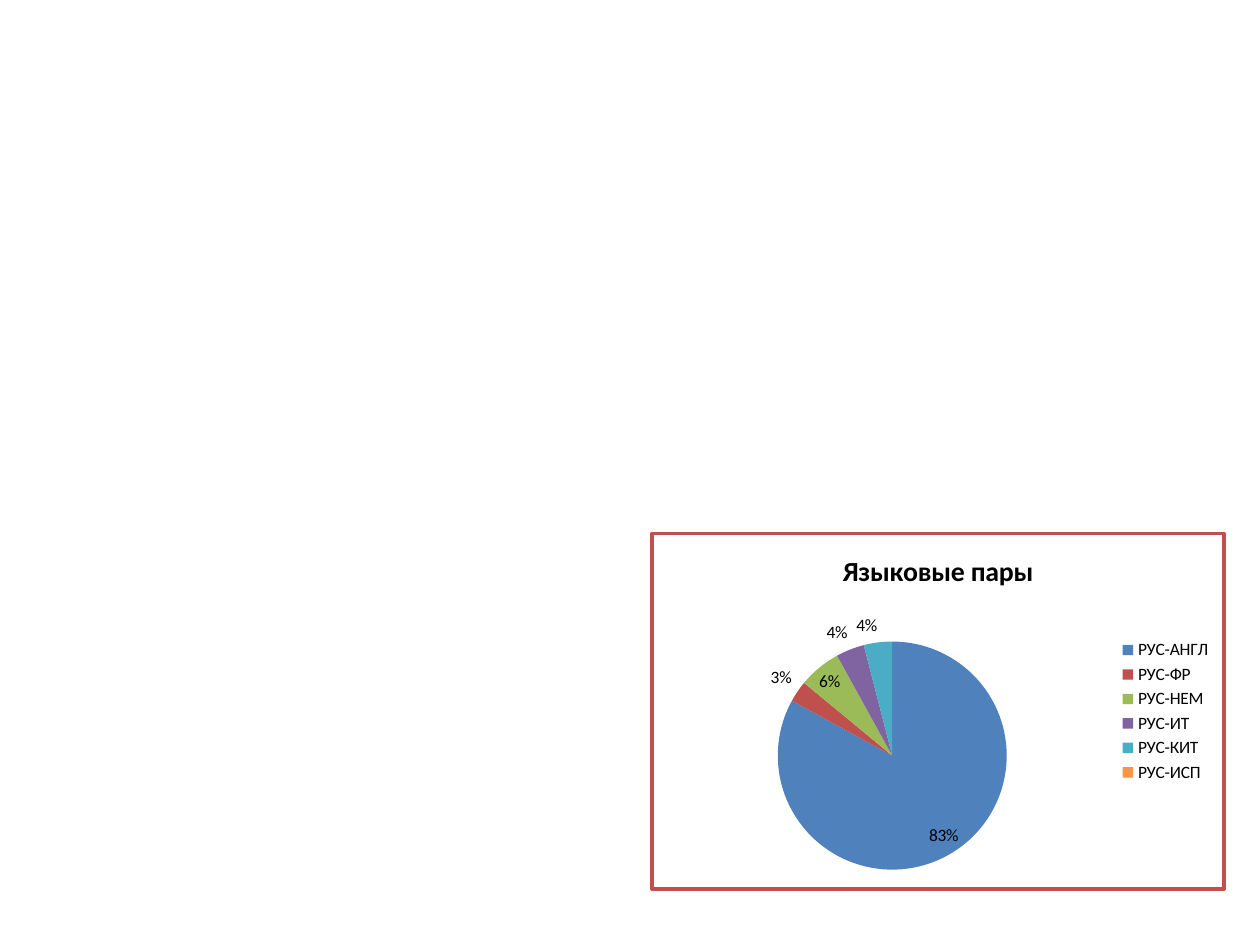
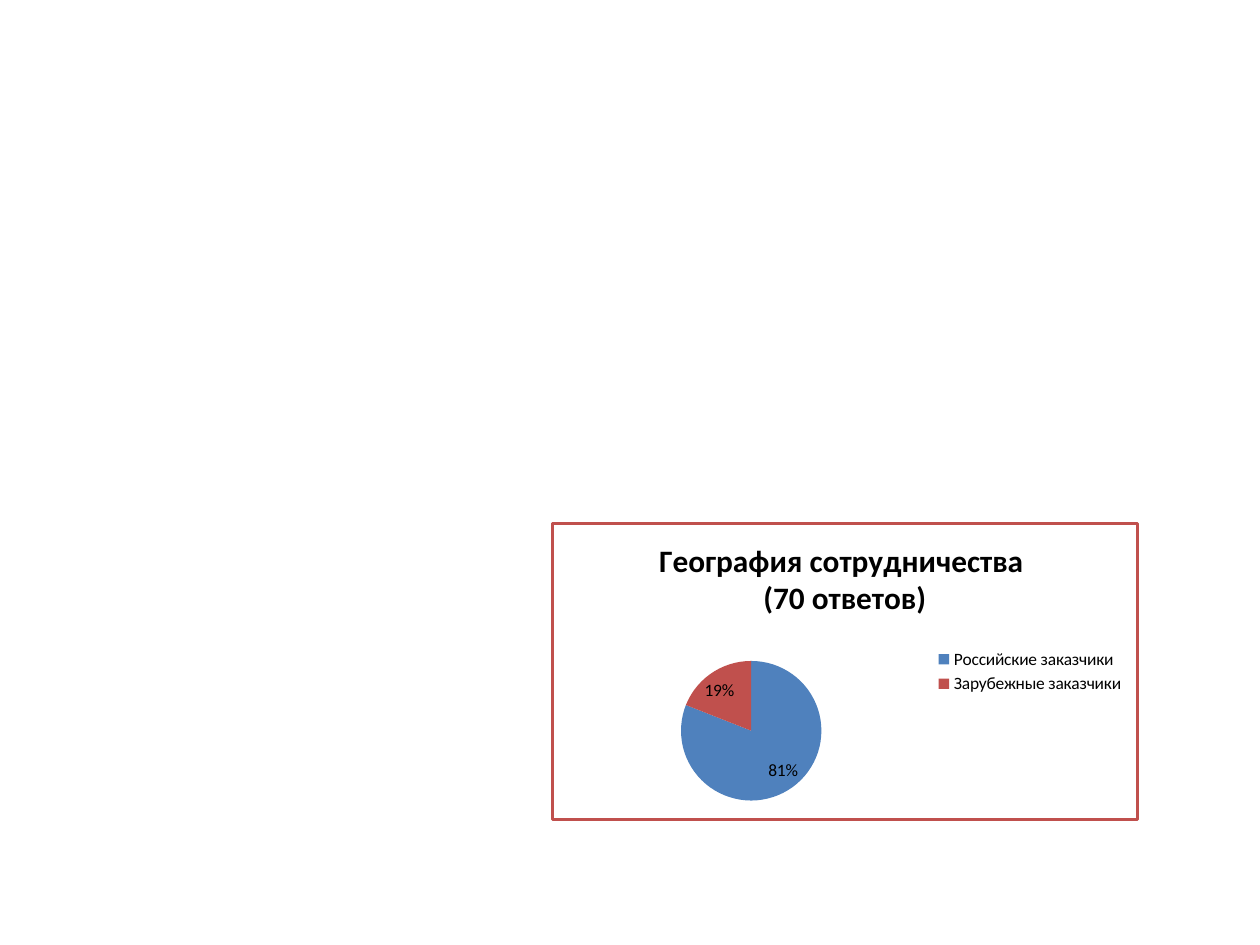
from lxml import etree
from pptx import Presentation
from pptx import util as u
from pptx.chart import data
from pptx.dml.color import RGBColor
from pptx.enum import chart as ch
from pptx.oxml import parse_xml
from pptx.oxml.ns import nsdecls, qn

ACCENTS = ["4F81BD", "C0504D", "9BBB59", "8064A2", "4BACC6", "F79646"]
WHITE, BLACK, BORDER = "FFFFFF", "000000", "C0504D"
FONT = "Calibri"


def rgb(value):
    """Turn a hex string into a colour."""
    return RGBColor.from_string(value)


class Deck:
    """Holds the presentation, its style and the current slide."""

    def __init__(self):
        """Start a 10 by 7.5 inch presentation."""
        self.prs = Presentation()
        self.prs.slide_width, self.prs.slide_height = u.Inches(10), u.Inches(7.5)
        self.s = None

    def slide(self):
        """Add an empty white slide."""
        self.s = self.prs.slides.add_slide(self.prs.slide_layouts[6])
        fill = self.s.background.fill
        fill.solid()
        fill.fore_color.rgb = rgb(WHITE)

    def font(self, font, size, bold=False):
        """Apply the deck's font."""
        font.name, font.size, font.bold = FONT, u.Pt(size), bold
        font.color.rgb = rgb(BLACK)

    def pie(self, box, series, title, title_size, shares, plot):
        """Add a framed pie chart with a title, a legend and percentages."""
        cd = data.CategoryChartData()
        cd.categories = list(shares)
        cd.add_series(series, list(shares.values()))
        chart = self.s.shapes.add_chart(
            ch.XL_CHART_TYPE.PIE, *map(u.Inches, box), cd).chart
        self.font(chart.font, 10)
        self.title(chart, title, title_size)
        chart.has_legend = True
        chart.legend.position = ch.XL_LEGEND_POSITION.RIGHT
        chart.legend.include_in_layout = False
        chart.plots[0].vary_by_categories = True
        self.slices(chart.plots[0].series[0], shares.values())
        self.place_plot(chart, plot)
        self.frame(chart)

    def title(self, chart, title, size):
        """Set the chart title in bold."""
        chart.has_title = True
        tf = chart.chart_title.text_frame
        tf.text = title
        for p in tf.paragraphs:
            self.font(p.font, size, True)
            for r in p.runs:
                self.font(r.font, size, True)
        chart.chart_title.include_in_layout = False

    def slices(self, ser, values):
        """Colour the slices and label all but the empty ones."""
        labels = ser.data_labels
        labels.show_percentage, labels.show_value = True, False
        labels.number_format, labels.number_format_is_linked = "0%", False
        labels.position = ch.XL_LABEL_POSITION.BEST_FIT
        self.font(labels.font, 10)
        hidden = 0
        for i, value in enumerate(values):
            fill = ser.points[i].format.fill
            fill.solid()
            fill.fore_color.rgb = rgb(ACCENTS[i])
            if not value:
                lbl = etree.Element(qn("c:dLbl"))
                etree.SubElement(lbl, qn("c:idx")).set("val", str(i))
                etree.SubElement(lbl, qn("c:delete")).set("val", "1")
                labels._element.insert(hidden, lbl)
                hidden += 1

    def place_plot(self, chart, plot):
        """Place the pie by fractions of the chart's size."""
        area = chart._chartSpace.chart.plotArea
        for old in area.findall(qn("c:layout")):
            area.remove(old)
        parts = "".join(f'<c:{k}Mode val="edge"/>' for k in "xy")
        parts += "".join(f'<c:{k} val="{v}"/>' for k, v in zip("xywh", plot))
        area.insert(0, parse_xml(
            f'<c:layout {nsdecls("c")}><c:manualLayout>'
            f'<c:layoutTarget val="inner"/>{parts}</c:manualLayout></c:layout>'))

    def frame(self, chart):
        """Fill the chart area and draw its border."""
        chart._chartSpace.chart.addnext(parse_xml(
            f'<c:spPr {nsdecls("c", "a")}>'
            f'<a:solidFill><a:srgbClr val="{WHITE}"/></a:solidFill>'
            f'<a:ln w="{u.Pt(2)}"><a:solidFill><a:srgbClr val="{BORDER}"/>'
            f'</a:solidFill></a:ln></c:spPr>'))


def main():
    """Build both slides."""
    deck = Deck()

    deck.slide()
    pairs = {"РУС-АНГЛ": 83, "РУС-ФР": 3, "РУС-НЕМ": 6,
             "РУС-ИТ": 4, "РУС-КИТ": 4, "РУС-ИСП": 0}
    deck.pie((5.16, 4.22, 4.57, 2.85), "Языковые пары", "Языковые пары", 16,
             pairs, (0.22, 0.3, 0.4, 0.65))

    deck.slide()
    clients = {"Российские заказчики": 81, "Зарубежные заказчики": 19}
    deck.pie((4.37, 4.14, 4.67, 2.38), "Series 1",
             "География сотрудничества \n(70 ответов)", 18,
             clients, (0.22, 0.46, 0.24, 0.48))

    deck.prs.save("out.pptx")


if __name__ == "__main__":
    main()
